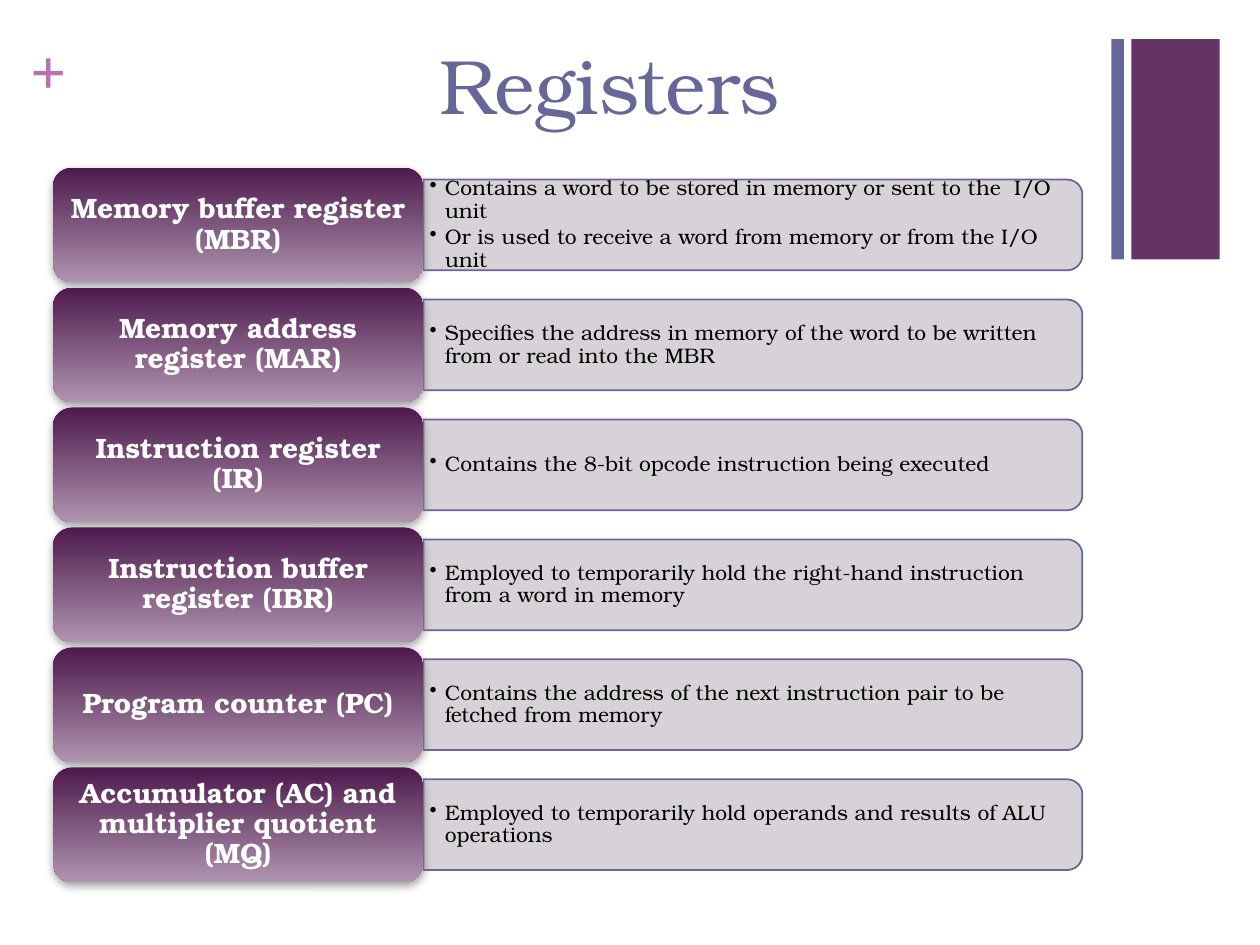
from lxml.etree import SubElement
from pptx import Presentation
from pptx.dml.color import RGBColor
from pptx.enum.shapes import MSO_SHAPE
from pptx.enum.text import MSO_ANCHOR, PP_ALIGN
from pptx.oxml.ns import qn
from pptx.util import Inches, Pt

PLUM = RGBColor(0x66, 0x33, 0x66)
SLATE = RGBColor(0x66, 0x66, 0x99)
ORCHID = RGBColor(0xB8, 0x70, 0xB8)
GRADIENT = RGBColor(0x4D, 0x1A, 0x4D), RGBColor(0xAF, 0x94, 0xAF)
PANEL_GRAY = RGBColor(0xD3, 0xCE, 0xD3)
SHADOW_GRAY = RGBColor(0x80, 0x80, 0x80)
WHITE = RGBColor(0xFF, 0xFF, 0xFF)
BLACK = RGBColor(0, 0, 0)
FONT = "TeX Gyre Bonum"

REGISTERS = [
    ("Memory buffer register (MBR)",
     ["Contains a word to be stored in memory or sent to the  I/O unit",
      "Or is used to receive a word from memory or from the I/O unit"]),
    ("Memory address register (MAR)",
     ["Specifies the address in memory of the word to be written from or read into the MBR"]),
    ("Instruction register (IR)",
     ["Contains the 8-bit opcode instruction being executed"]),
    ("Instruction buffer register (IBR)",
     ["Employed to temporarily hold the right-hand instruction from a word in memory"]),
    ("Program counter (PC)",
     ["Contains the address of the next instruction pair to be fetched from memory"]),
    ("Accumulator (AC) and multiplier quotient (MQ)",
     ["Employed to temporarily hold operands and results of ALU operations"]),
]
SIDE_BARS = [(8.98, 0.7, PLUM), (8.82, 0.1, SLATE)]

FIRST_TOP, LAST_TOP = 1.33, 6.09
LABEL_LEFT, LABEL_WIDTH, LABEL_HEIGHT = 0.42, 2.94, 0.91
PANEL_LEFT, PANEL_WIDTH, PANEL_HEIGHT = 3.36, 5.23, 0.72
DETAIL_WIDTH, DETAIL_HEIGHT = 5.19, 0.65


def add_shape(slide, kind, left, top, width, height):
    shape = slide.shapes.add_shape(
        kind, Inches(left), Inches(top), Inches(width), Inches(height))
    shape.shadow.inherit = False
    shape.line.fill.background()
    return shape


def add_text_box(slide, left, top, width, height):
    return slide.shapes.add_textbox(
        Inches(left), Inches(top), Inches(width), Inches(height))


def set_frame(shape, side, edge, anchor):
    frame = shape.text_frame
    values = {"word_wrap": True, "vertical_anchor": anchor,
              "margin_left": Inches(side), "margin_right": Inches(side),
              "margin_top": Inches(edge), "margin_bottom": Inches(edge)}
    for name, value in values.items():
        setattr(frame, name, value)
    return frame


def write(paragraph, text, size, color, alignment=PP_ALIGN.LEFT, bold=False, font=FONT):
    paragraph.alignment = alignment
    run = paragraph.add_run()
    run.text = text
    for name, value in {"name": font, "size": Pt(size), "bold": bold}.items():
        setattr(run.font, name, value)
    run.font.color.rgb = color


def add_bullet(paragraph):
    properties = paragraph._p.get_or_add_pPr()
    properties.set("marL", str(Inches(0.12)))
    properties.set("indent", str(-Inches(0.12)))
    SubElement(properties, qn("a:buChar")).set("char", "•")


def add_drop_shadow(shape):
    effects = shape._element.spPr.find(qn("a:effectLst"))
    shadow = SubElement(effects, qn("a:outerShdw"), blurRad=str(Pt(5)),
                        dist=str(Pt(2)), dir="5400000", rotWithShape="0")
    color = SubElement(shadow, qn("a:srgbClr"), val=str(SHADOW_GRAY))
    SubElement(color, qn("a:alpha"), val="75000")


def add_panel(slide, middle):
    """Rounded-right panel: a round-top rectangle turned a quarter."""
    center = PANEL_LEFT + PANEL_WIDTH / 2
    panel = add_shape(slide, MSO_SHAPE.ROUND_2_SAME_RECTANGLE,
                      center - PANEL_HEIGHT / 2, middle - PANEL_WIDTH / 2,
                      PANEL_HEIGHT, PANEL_WIDTH)
    panel.rotation = 90
    panel.fill.solid()
    panel.fill.fore_color.rgb = PANEL_GRAY
    color = panel._element.spPr.find(qn("a:solidFill")).find(qn("a:srgbClr"))
    SubElement(color, qn("a:alpha"), val="90000")
    panel.line.color.rgb = SLATE
    panel.line.width = Pt(1)


def add_details(slide, middle, details):
    box = add_text_box(slide, PANEL_LEFT, middle - DETAIL_HEIGHT / 2,
                       DETAIL_WIDTH, DETAIL_HEIGHT)
    frame = set_frame(box, 0.05, 0.03, MSO_ANCHOR.MIDDLE)
    for index, detail in enumerate(details):
        paragraph = frame.add_paragraph() if index else frame.paragraphs[0]
        paragraph.line_spacing = 0.9
        paragraph.space_after = Pt(2)
        add_bullet(paragraph)
        write(paragraph, detail, 12, BLACK)


def add_label(slide, top, name):
    label = add_shape(slide, MSO_SHAPE.ROUNDED_RECTANGLE,
                      LABEL_LEFT, top, LABEL_WIDTH, LABEL_HEIGHT)
    label.fill.gradient()
    label.fill.gradient_angle = 270
    for stop, color, position in zip(label.fill.gradient_stops, GRADIENT, (0, 1)):
        stop.color.rgb = color
        stop.position = position
    add_drop_shadow(label)
    paragraph = set_frame(label, 0.07, 0.03, MSO_ANCHOR.MIDDLE).paragraphs[0]
    paragraph.line_spacing = 0.9
    write(paragraph, name, 16, WHITE, PP_ALIGN.CENTER, bold=True)


def main():
    presentation = Presentation()
    presentation.slide_width, presentation.slide_height = Inches(10), Inches(7.5)
    slide = presentation.slides.add_slide(presentation.slide_layouts[6])

    for left, width, color in SIDE_BARS:
        bar = add_shape(slide, MSO_SHAPE.RECTANGLE, left, 0.31, width, 1.75)
        bar.fill.solid()
        bar.fill.fore_color.rgb = color

    plus = set_frame(add_text_box(slide, 0.24, 0.25, 0.29, 0.61), 0, 0, MSO_ANCHOR.TOP)
    write(plus.paragraphs[0], "+", 36, ORCHID, bold=True, font="Times New Roman")
    title = set_frame(add_text_box(slide, 0, 0.25, 6.29, 1.22), 0.1, 0.05, MSO_ANCHOR.TOP)
    write(title.paragraphs[0], "Registers", 44, SLATE, PP_ALIGN.RIGHT)

    pitch = (LAST_TOP - FIRST_TOP) / (len(REGISTERS) - 1)
    for row, (name, details) in enumerate(REGISTERS):
        top = FIRST_TOP + row * pitch
        middle = top + LABEL_HEIGHT / 2
        add_panel(slide, middle)
        add_details(slide, middle, details)
        add_label(slide, top, name)

    presentation.save("out.pptx")


if __name__ == "__main__":
    main()
